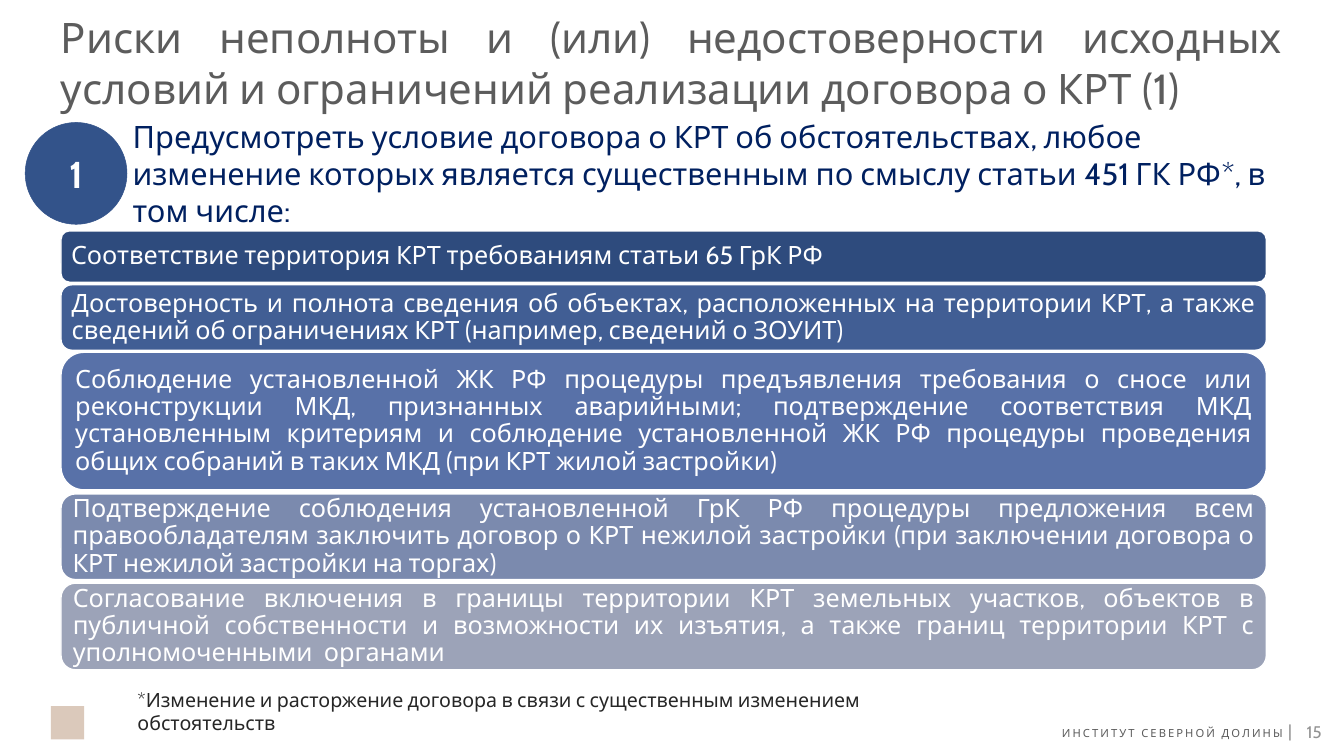
from dataclasses import dataclass

from pptx import Presentation
from pptx import util as u
from pptx.dml.color import RGBColor
from pptx.enum import shapes, text


@dataclass(frozen=True)
class Theme:
    font: str = "Cabin"
    title: str = "5C5C5C"
    lead: str = "002060"
    badge: str = "33538A"
    white: str = "FFFFFF"
    note: str = "262626"
    page: str = "929292"
    mark: str = "DBC9BB"
    bands: tuple = ("2E4B7D", "415E94", "5871A8", "7B8AAE", "9CA3B8")
    title_size: float = 60
    badge_size: float = 53.3
    lead_size: float = 44
    band_size: float = 36
    note_size: float = 28
    page_size: float = 24
    footer_size: float = 16


THEME = Theme()
SLIDE_W, SLIDE_H = 26.67, 15

CONDITIONS = (
    (4.58, 1.02, "Соответствие территория КРТ требованиям статьи 65 ГрК РФ"),
    (5.65, 1.3, "Достоверность и полнота сведения об объектах, расположенных на территории КРТ, "
                "а также сведений об ограничениях КРТ (например, сведений о ЗОУИТ)"),
    (6.99, 2.73, "Соблюдение установленной ЖК РФ процедуры предъявления требования о сносе или "
                 "реконструкции МКД, признанных аварийными; подтверждение соответствия МКД "
                 "установленным критериям и соблюдение установленной ЖК РФ процедуры проведения "
                 "общих собраний в таких МКД (при КРТ жилой застройки)"),
    (9.8, 1.7, "Подтверждение соблюдения установленной ГрК РФ процедуры предложения всем "
               "правообладателям заключить договор о КРТ нежилой застройки (при заключении "
               "договора о КРТ нежилой застройки на торгах)"),
    (11.57, 1.72, "Согласование включения в границы территории КРТ земельных участков, объектов в "
                  "публичной собственности и возможности их изъятия, а также границ территории КРТ "
                  "с уполномоченными  органами"),
)


def inches(*lengths):
    return [u.Inches(length) for length in lengths]


def write(shape, words, size, color, align=text.PP_ALIGN.LEFT, insets=(0, 0),
          anchor=text.MSO_ANCHOR.MIDDLE, bold=False, spacing=1.0):
    frame = shape.text_frame
    frame.word_wrap = True
    frame.auto_size = text.MSO_AUTO_SIZE.NONE
    frame.vertical_anchor = anchor
    frame.margin_left = frame.margin_right = u.Inches(insets[0])
    frame.margin_top = frame.margin_bottom = u.Inches(insets[1])
    paragraph = frame.paragraphs[0]
    paragraph.alignment = align
    paragraph.line_spacing = spacing
    run = paragraph.add_run()
    run.text = words
    run.font.name = THEME.font
    run.font.size = u.Pt(size)
    run.font.bold = bold
    run.font.color.rgb = RGBColor.from_string(color)
    return run


def add_panel(slide, kind, box, fill, line=None, width=0):
    panel = slide.shapes.add_shape(kind, *inches(*box))
    panel.shadow.inherit = False
    panel.fill.solid()
    panel.fill.fore_color.rgb = RGBColor.from_string(fill)
    if line:
        panel.line.color.rgb = RGBColor.from_string(line)
        panel.line.width = u.Pt(width)
    else:
        panel.line.fill.background()
    return panel


def add_label(slide, box, words, size, color, **options):
    label = slide.shapes.add_textbox(*inches(*box))
    return write(label, words, size, color, **options)


def add_title(slide, box):
    title = slide.shapes.title
    title.left, title.top, title.width, title.height = inches(*box)
    write(title, "Риски неполноты и (или) недостоверности исходных условий "
                 "и ограничений реализации договора о КРТ (1)",
          THEME.title_size, THEME.title, align=text.PP_ALIGN.JUSTIFY)


def add_lead(slide, box):
    left, top, width, height = box
    badge = add_panel(slide, shapes.MSO_SHAPE.OVAL, (left, top, height, height),
                      THEME.badge, THEME.badge, 0.75)
    write(badge, "1", THEME.badge_size, THEME.white, align=text.PP_ALIGN.CENTER, bold=True)
    indent = height + 0.11
    add_label(slide, (left + indent, top, width - indent, height),
              "Предусмотреть условие договора о КРТ об обстоятельствах, любое изменение которых "
              "является существенным по смыслу статьи 451 ГК РФ*, в том числе:",
              THEME.lead_size, THEME.lead)


def add_conditions(slide, left, width):
    for (top, height, words), fill in zip(CONDITIONS, THEME.bands):
        band = add_panel(slide, shapes.MSO_SHAPE.ROUNDED_RECTANGLE,
                         (left, top, width, height), fill, THEME.white, 2)
        write(band, words, THEME.band_size, THEME.white, align=text.PP_ALIGN.JUSTIFY,
              insets=(0.15, 0.15), spacing=0.9)


def add_footnote(slide, box):
    add_label(slide, box,
              "*Изменение и расторжение договора в связи с существенным изменением обстоятельств",
              THEME.note_size, THEME.note, insets=(0.1, 0.05), anchor=text.MSO_ANCHOR.TOP)


def add_footer(slide, box):
    left, top, width, height = box
    right = left + width
    add_panel(slide, shapes.MSO_SHAPE.RECTANGLE, (left, top, 0.66, 0.66), THEME.mark)
    institute = add_label(slide, (right - 6.08, top + 0.36, 4.97, 0.37),
                          "ИНСТИТУТ СЕВЕРНОЙ ДОЛИНЫ", THEME.footer_size, THEME.title,
                          align=text.PP_ALIGN.RIGHT, insets=(0.1, 0.05),
                          anchor=text.MSO_ANCHOR.TOP)
    institute.font._element.set("spc", "300")
    add_label(slide, (right - 1.11, top + 0.29, 0.25, 0.4), "|", THEME.page_size, THEME.page)
    add_label(slide, (right - 1.01, top + 0.1, 1.01, height - 0.1), "15",
              THEME.page_size, THEME.page, insets=(0.27, 0.13))


def main():
    deck = Presentation()
    deck.slide_width, deck.slide_height = inches(SLIDE_W, SLIDE_H)
    slide = deck.slides.add_slide(deck.slide_layouts[5])
    add_footer(slide, (1.01, 14.01, SLIDE_W - 1.01, 0.9))
    add_title(slide, (1.21, 0.45, 24.25, 1.57))
    add_conditions(slide, 1.21, 23.92)
    add_lead(slide, (0.5, 2.43, 25.15, 2.02))
    add_footnote(slide, (2.63, 13.59, 17.14, 0.57))
    deck.save("out.pptx")


if __name__ == "__main__":
    main()
